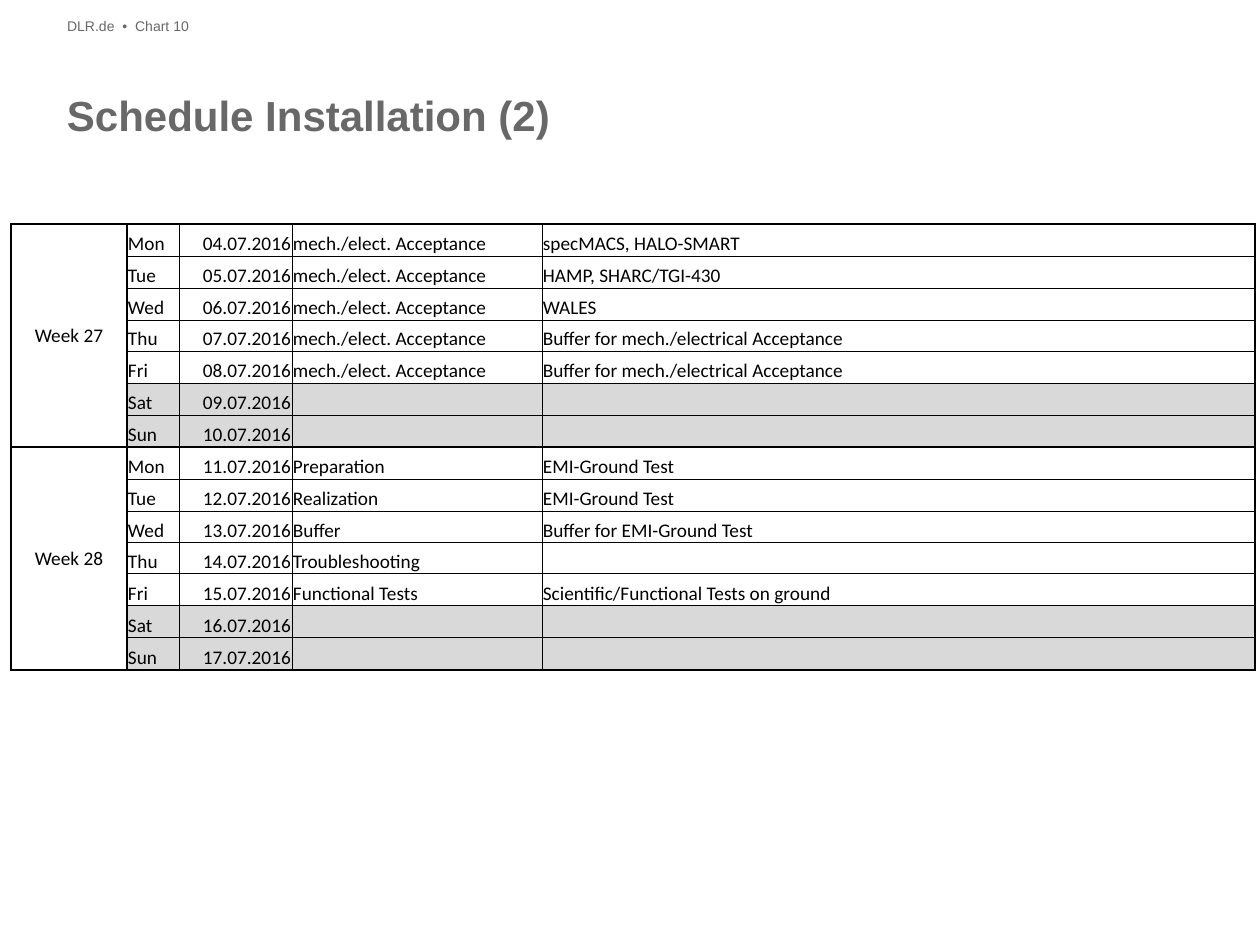
from lxml.etree import SubElement
from pptx import Presentation
from pptx.dml.color import RGBColor
from pptx.enum.text import MSO_ANCHOR, PP_ALIGN
from pptx.oxml.ns import qn
from pptx.util import Emu, Pt

PX = 914400 // 126
GREY = RGBColor(0x68, 0x68, 0x68)
BLACK = RGBColor(0, 0, 0)
WEEKEND = RGBColor(0xD9, 0xD9, 0xD9)

DAYS = ["Mon", "Tue", "Wed", "Thu", "Fri", "Sat", "Sun"]
WEEK_HEIGHT = 223
COLUMN_WIDTHS = [116, 52, 113, 250, 713]
FIRST_DAY = 4
ACCEPTANCE = "mech./elect. Acceptance"
BUFFER = "Buffer for mech./electrical Acceptance"
WEEKS = {
    "Week 27": [
        (ACCEPTANCE, "specMACS, HALO-SMART"),
        (ACCEPTANCE, "HAMP, SHARC/TGI-430"),
        (ACCEPTANCE, "WALES"),
        (ACCEPTANCE, BUFFER),
        (ACCEPTANCE, BUFFER),
        ("", ""),
        ("", ""),
    ],
    "Week 28": [
        ("Preparation", "EMI-Ground Test"),
        ("Realization", "EMI-Ground Test"),
        ("Buffer", "Buffer for EMI-Ground Test"),
        ("Troubleshooting", ""),
        ("Functional Tests", "Scientific/Functional Tests on ground"),
        ("", ""),
        ("", ""),
    ],
}


def px(length):
    return Emu(length * PX)


def write(frame, text, size, font="Arial", color=GREY, bold=False,
          align=PP_ALIGN.LEFT):
    paragraph = frame.paragraphs[0]
    paragraph.alignment = align
    if not text:
        # An empty cell needs its own text size, or its row grows.
        end = SubElement(paragraph._p, qn("a:endParaRPr"))
        end.set("sz", str(size * 100))
        return
    run = paragraph.add_run()
    run.text = text
    run.font.size = Pt(size)
    run.font.name = font
    run.font.bold = bold
    run.font.color.rgb = color


def add_text(slide, text, left, top, width, height, **text_format):
    frame = slide.shapes.add_textbox(
        px(left), px(top), px(width), px(height)).text_frame
    frame.word_wrap = True
    frame.margin_left = frame.margin_right = 0
    frame.margin_top = frame.margin_bottom = 0
    write(frame, text, **text_format)


def set_borders(cell, **widths):
    """Draw black borders; widths are points for the sides L, R, T and B."""
    properties = cell._tc.get_or_add_tcPr()
    for side, width in widths.items():
        line = SubElement(properties, qn(f"a:ln{side}"), w=str(Pt(width)))
        fill = SubElement(line, qn("a:solidFill"))
        SubElement(fill, qn("a:srgbClr"), val=str(BLACK))


def fill_cell(cell, text, column, day):
    """Format one cell; day counts from 0 on Monday."""
    is_week = column == 0
    cell.margin_left = cell.margin_right = cell.margin_top = px(1)
    cell.margin_bottom = 0
    cell.vertical_anchor = MSO_ANCHOR.MIDDLE if is_week else MSO_ANCHOR.BOTTOM
    set_borders(
        cell,
        L=1 if column <= 1 else 0.5,
        R=1 if is_week or column == len(COLUMN_WIDTHS) - 1 else 0.5,
        T=1 if is_week or day == 0 else 0.5,
        B=1 if is_week or day == len(DAYS) - 1 else 0.5,
    )
    if day >= 5 and not is_week:
        cell.fill.solid()
        cell.fill.fore_color.rgb = WEEKEND
    else:
        cell.fill.background()
    align = {0: PP_ALIGN.CENTER, 2: PP_ALIGN.RIGHT}.get(column, PP_ALIGN.LEFT)
    write(cell.text_frame, text, 11, font="Calibri", color=BLACK, align=align)


def add_schedule(slide, left, top):
    days = len(DAYS)
    table = slide.shapes.add_table(
        days * len(WEEKS), len(COLUMN_WIDTHS), px(left), px(top),
        px(sum(COLUMN_WIDTHS)), px(WEEK_HEIGHT * len(WEEKS))).table
    table.first_row = table.horz_banding = False
    for column, width in zip(table.columns, COLUMN_WIDTHS):
        column.width = px(width)
    edges = [round(day * WEEK_HEIGHT / days) for day in range(days + 1)]

    for week_index, (week, tasks) in enumerate(WEEKS.items()):
        first_row = week_index * days
        for day, (task, details) in enumerate(tasks):
            row = first_row + day
            table.rows[row].height = px(edges[day + 1] - edges[day])
            date = f"{FIRST_DAY + row:02}.07.2016"
            texts = [week if day == 0 else "", DAYS[day], date, task, details]
            for column, text in enumerate(texts):
                fill_cell(table.cell(row, column), text, column, day)
        table.cell(first_row, 0).merge(table.cell(first_row + days - 1, 0))


def main():
    presentation = Presentation()
    presentation.slide_width = px(1260)
    presentation.slide_height = px(945)
    slide = presentation.slides.add_slide(presentation.slide_layouts[6])
    add_text(slide, "Schedule Installation (2)", 67, 90, 1126, 102,
             size=24, bold=True)
    add_text(slide, "DLR.de  •  Chart 10", 67, 18, 144, 20, size=8)
    add_schedule(slide, 11, 224)
    presentation.save("out.pptx")


if __name__ == "__main__":
    main()
